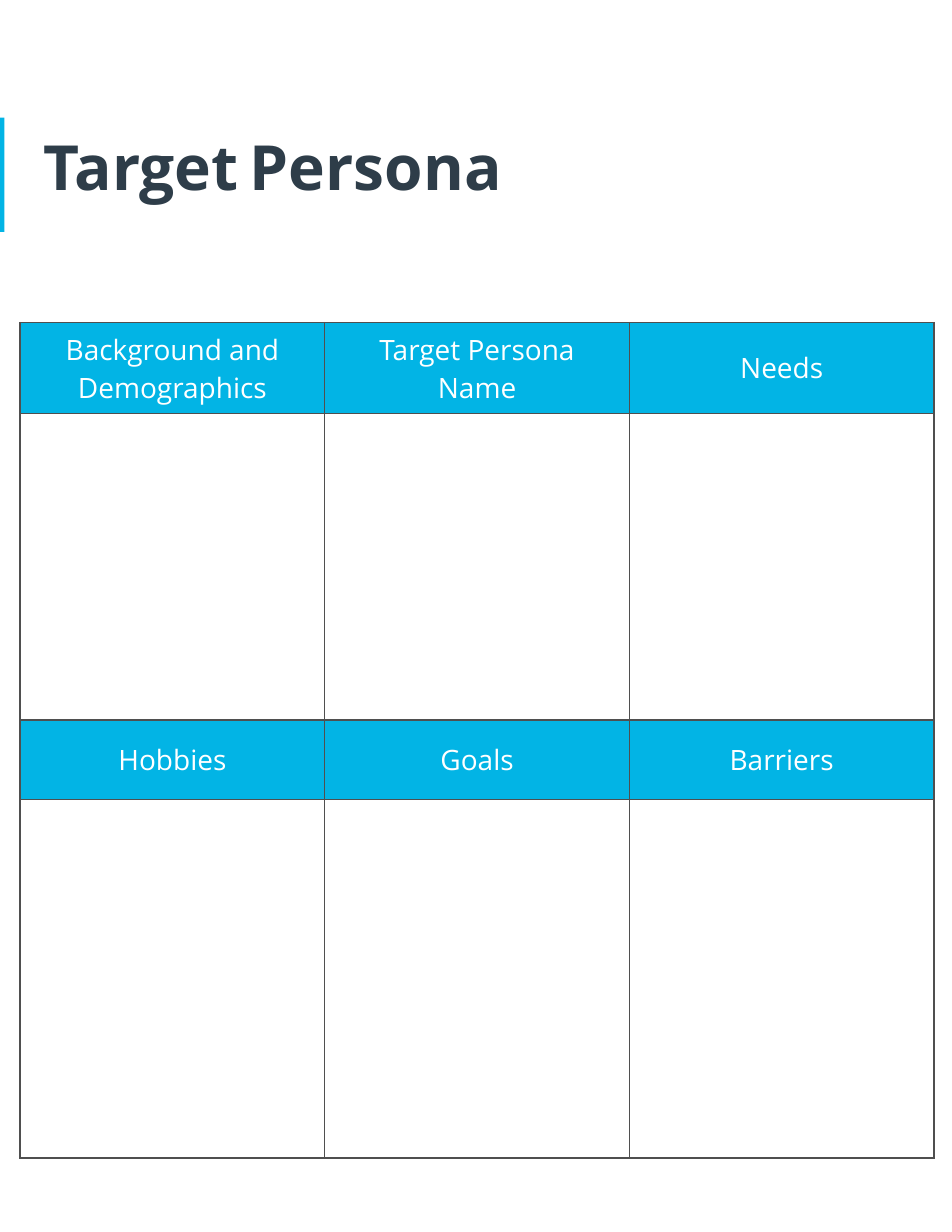
from dataclasses import dataclass

from lxml.etree import SubElement
from pptx import Presentation
from pptx.dml.color import RGBColor
from pptx.enum.shapes import MSO_SHAPE as Preset
from pptx.enum.text import MSO_ANCHOR as Anchor, PP_ALIGN as Align
from pptx.oxml.ns import qn
from pptx.slide import Slide
from pptx.table import _Cell as Cell
from pptx.util import Inches, Pt

BLUE = RGBColor(0x02, 0xB4, 0xE5)
NAVY = RGBColor(0x2E, 0x3D, 0x49)
GREY = RGBColor(0x4F, 0x4F, 0x4F)
WHITE = RGBColor(0xFF, 0xFF, 0xFF)
FONT = "Open Sans"
WIDTH, HEIGHT = Inches(8.5), Inches(11)
COLUMN_WIDTH = Inches(2.72)


@dataclass(frozen=True)
class Band:
    headings: tuple[str, ...]
    heading_height: float
    body_height: float


BANDS = (
    Band(("Background and Demographics", "Target Persona\nName", "Needs"), 0.81, 2.74),
    Band(("Hobbies", "Goals", "Barriers"), 0.71, 3.2),
)


def add_accent(slide: Slide) -> None:
    """Draw the blue bar at the left edge beside the title."""
    bar = slide.shapes.add_shape(Preset.RECTANGLE, 0, Inches(1.05), Inches(0.04), Inches(1.02))
    bar.shadow.inherit = False
    bar.fill.solid()
    bar.fill.fore_color.rgb = BLUE
    bar.line.fill.background()


def add_title(slide: Slide) -> None:
    """Write the title with a narrower space between its words."""
    box = slide.shapes.add_textbox(Inches(0.29), Inches(0.95), Inches(7.92), Inches(1.22))
    frame = box.text_frame
    frame.word_wrap = True
    frame.margin_left = frame.margin_right = Inches(0.1)
    frame.margin_top = frame.margin_bottom = Inches(0.1)
    paragraph = frame.paragraphs[0]
    paragraph.line_spacing = 1.15
    paragraph.font.name = FONT
    paragraph.font.color.rgb = NAVY
    for text, size, bold in (("Target", 40, True), (" ", 28, False), ("Persona", 40, True)):
        run = paragraph.add_run()
        run.text = text
        run.font.name = FONT
        run.font.size = Pt(size)
        run.font.bold = bold
        run.font.color.rgb = NAVY


def set_borders(cell: Cell) -> None:
    """Give all four sides of a cell a thin grey line."""
    properties = cell._tc.get_or_add_tcPr()
    for side in ("lnL", "lnR", "lnT", "lnB"):
        line = SubElement(properties, qn(f"a:{side}"), w=str(Pt(1)))
        fill = SubElement(line, qn("a:solidFill"))
        SubElement(fill, qn("a:srgbClr"), val=str(GREY))


def write_heading(cell: Cell, text: str) -> None:
    """Fill a heading cell and centre its white text."""
    cell.fill.solid()
    cell.fill.fore_color.rgb = BLUE
    cell.vertical_anchor = Anchor.MIDDLE
    cell.margin_left = cell.margin_right = Inches(0.07)
    cell.margin_top = cell.margin_bottom = Inches(0.07)
    cell.text_frame.text = text
    for paragraph in cell.text_frame.paragraphs:
        paragraph.alignment = Align.CENTER
        paragraph.font.name = FONT
        paragraph.font.size = Pt(18)
        paragraph.font.color.rgb = WHITE


def add_persona_table(slide: Slide) -> None:
    """Build the table from bands of a heading row over an empty row."""
    heights = [Inches(h) for band in BANDS for h in (band.heading_height, band.body_height)]
    columns = len(BANDS[0].headings)
    table = slide.shapes.add_table(
        len(heights), columns, Inches(0.18), Inches(2.88), columns * COLUMN_WIDTH, sum(heights)
    ).table
    table.first_row = table.horz_banding = False
    for column in table.columns:
        column.width = COLUMN_WIDTH
    for row, height in zip(table.rows, heights):
        row.height = height
    for cell in table.iter_cells():
        set_borders(cell)
        cell.fill.background()
    for index, band in enumerate(BANDS):
        for column, heading in enumerate(band.headings):
            write_heading(table.cell(2 * index, column), heading)


def main() -> None:
    """Build and save the target persona slide."""
    presentation = Presentation()
    presentation.slide_width, presentation.slide_height = WIDTH, HEIGHT
    slide = presentation.slides.add_slide(presentation.slide_layouts[6])
    add_accent(slide)
    add_title(slide)
    add_persona_table(slide)
    presentation.save("out.pptx")


if __name__ == "__main__":
    main()
